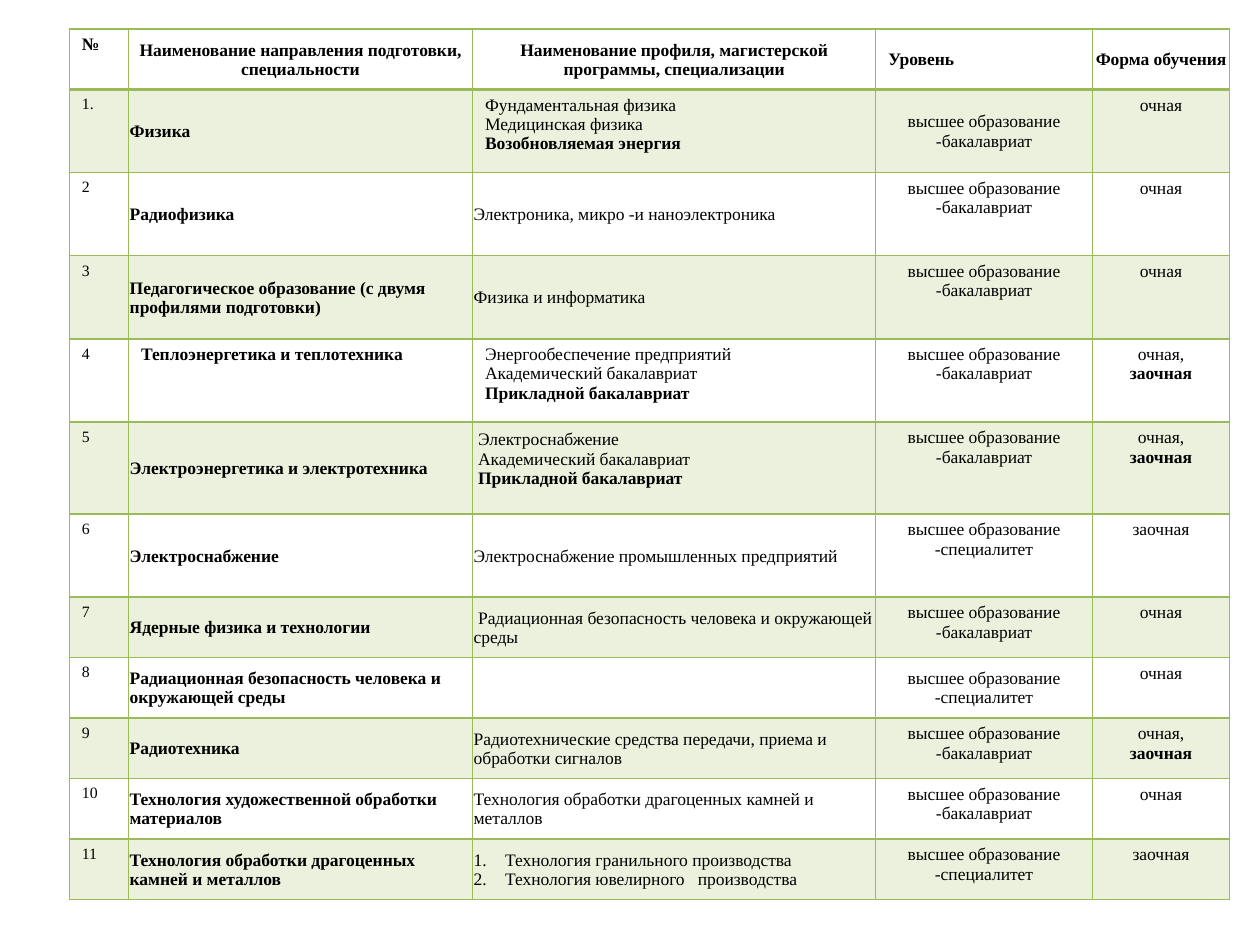
from lxml.etree import SubElement
from pptx import Presentation
from pptx.dml.color import RGBColor
from pptx.enum.text import MSO_ANCHOR as Anchor, PP_ALIGN as Align
from pptx.oxml.ns import qn
from pptx.util import Inches, Pt

COLORS = {"text": "000000", "green": "9BBB59"}
FONT = "Times New Roman"
BACHELOR = "высшее образование -бакалавриат"
SPECIALIST = "высшее образование -специалитет"
FULL, PART, BOTH = "очная", "заочная", "очная, *заочная*"

COLUMN_WIDTHS = [0.47, 2.73, 3.2, 1.72, 1.09]
ROW_HEIGHTS = [0.48] + [0.66] * 4 + [0.73, 0.66] + [0.48] * 5

# Asterisks enclose bold text, line breaks separate paragraphs
HEADER = ["№", "Наименование направления подготовки, специальности",
          "Наименование профиля, магистерской программы, специализации",
          "Уровень", "Форма обучения "]
PROGRAMS = [
    ("1.", "Физика",
     "Фундаментальная физика\nМедицинская физика\n*Возобновляемая энергия*", BACHELOR, FULL),
    ("2", "Радиофизика", "Электроника, микро -и наноэлектроника", BACHELOR, FULL),
    ("3", "Педагогическое образование (с двумя профилями подготовки)",
     "Физика и информатика", BACHELOR, FULL),
    ("4", "Теплоэнергетика и теплотехника",
     "Энергообеспечение предприятий\nАкадемический бакалавриат\n*Прикладной бакалавриат*",
     BACHELOR, BOTH),
    ("5", "Электроэнергетика и электротехника",
     " Электроснабжение\n Академический бакалавриат\n *Прикладной бакалавриат*",
     BACHELOR, BOTH),
    ("6", "Электроснабжение", "Электроснабжение промышленных предприятий", SPECIALIST, PART),
    ("7", "Ядерные физика и технологии",
     " Радиационная безопасность человека и окружающей среды", BACHELOR, FULL),
    ("8", "Радиационная безопасность человека и окружающей среды", "", SPECIALIST, FULL),
    ("9", "Радиотехника", "Радиотехнические средства передачи, приема и обработки сигналов",
     BACHELOR, BOTH),
    ("10", "Технология художественной обработки материалов",
     "Технология обработки драгоценных камней и металлов", BACHELOR, FULL),
    ("11", "Технология обработки драгоценных камней и металлов",
     "Технология гранильного производства\nТехнология ювелирного   производства",
     SPECIALIST, PART),
]


def write_text(frame, text, size=10, bold=False, align=Align.LEFT, numbered=False):
    """Fill a text frame, one paragraph per line."""
    for index, line in enumerate(text.split("\n")):
        para = frame.paragraphs[0] if index == 0 else frame.add_paragraph()
        para.alignment = align
        if numbered:
            props = para._p.get_or_add_pPr()
            props.set("marL", str(Inches(0.25)))
            props.set("indent", str(-Inches(0.25)))
            SubElement(props, qn("a:buFont"), typeface="+mj-lt")
            SubElement(props, qn("a:buAutoNum"), type="arabicPeriod")
        for part, words in enumerate(line.split("*")):
            if words:
                span = para.add_run()
                span.text = words
                span.font.name = FONT
                span.font.size = Pt(size)
                span.font.bold = bold or part % 2 == 1
                span.font.color.rgb = RGBColor.from_string(COLORS["text"])


class SlideBuilder:
    """Holds the colours and the current slide."""

    def __init__(self, slide, colors):
        self.slide = slide
        self.colors = colors

    def table(self, left, top, widths, heights):
        frame = self.slide.shapes.add_table(
            len(heights), len(widths), Inches(left), Inches(top),
            Inches(sum(widths)), Inches(sum(heights)))
        table = frame.table
        table.first_row = table.horz_banding = False
        for column, width in zip(table.columns, widths):
            column.width = Inches(width)
        for row, height in zip(table.rows, heights):
            row.height = Inches(height)
        return table

    def borders(self, cell, top=1, bottom=1):
        props = cell._tc.get_or_add_tcPr()
        for side, width in (("L", 1), ("R", 1), ("T", top), ("B", bottom)):
            line = SubElement(props, qn(f"a:ln{side}"), w=str(Pt(width)))
            fill = SubElement(line, qn("a:solidFill"))
            SubElement(fill, qn("a:srgbClr"), val=self.colors["green"])

    def shade(self, cell, tinted):
        if not tinted:
            cell.fill.background()
            return
        cell.fill.solid()
        cell.fill.fore_color.rgb = RGBColor.from_string(self.colors["green"])
        color = cell._tc.tcPr.find(qn("a:solidFill")).find(qn("a:srgbClr"))
        SubElement(color, qn("a:alpha"), val="20000")

    def compact(self, cell):
        cell.vertical_anchor = Anchor.MIDDLE
        cell.margin_left = cell.margin_right = cell.margin_top = Inches(0.01)
        cell.margin_bottom = 0


def is_compact(row, column):
    """Tell whether a cell has thin margins and middle-anchored text."""
    if row == 0:
        return column in (1, 2, 4)
    return ((column == 1 and row != 4) or (column == 2 and row not in (1, 4))
            or (column == 3 and row in (1, 8)))


def main():
    deck = Presentation()
    deck.slide_width, deck.slide_height = Inches(10), Inches(7.5)
    builder = SlideBuilder(deck.slides.add_slide(deck.slide_layouts[6]), COLORS)
    table = builder.table(0.55, 0.23, COLUMN_WIDTHS, ROW_HEIGHTS)

    for row, texts in enumerate([HEADER] + PROGRAMS):
        for column, text in enumerate(texts):
            cell = table.cell(row, column)
            builder.borders(cell, top=2 if row == 1 else 1, bottom=2 if row == 0 else 1)
            builder.shade(cell, tinted=row % 2 == 1)
            if is_compact(row, column):
                builder.compact(cell)
            centred = column in (1, 2, 4) if row == 0 else column >= 3
            write_text(cell.text_frame, text,
                       size=9 if column == 0 and row else 10,
                       bold=row == 0 or column == 1,
                       align=Align.CENTER if centred else Align.LEFT,
                       numbered=(row, column) == (11, 2))

    # Cells whose text sits off the usual line
    table.cell(0, 3).vertical_anchor = Anchor.MIDDLE
    table.cell(5, 2).margin_bottom = Inches(0.15)
    deck.save("out.pptx")


if __name__ == "__main__":
    main()
